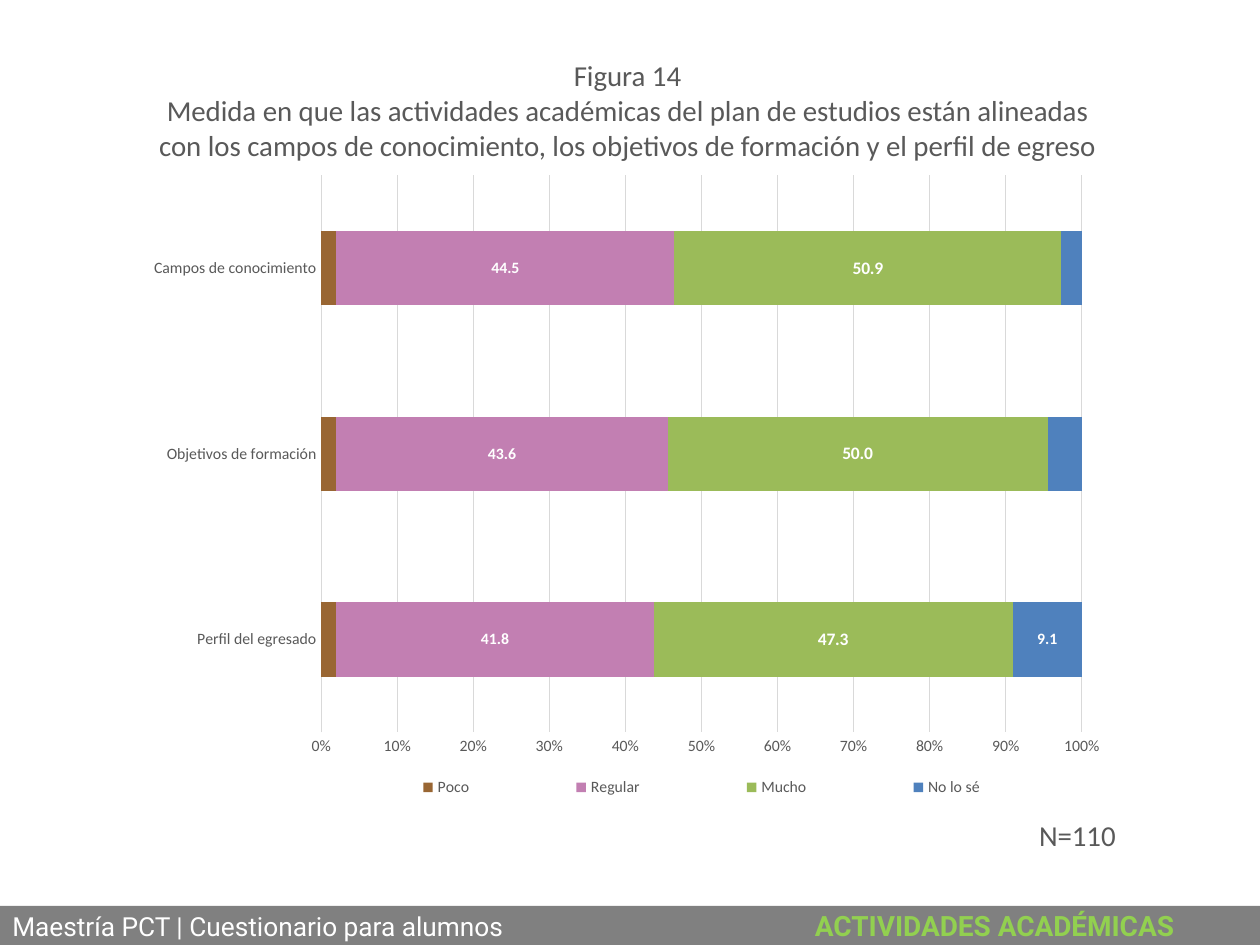
from lxml import etree
from pptx import Presentation
from pptx.chart.data import CategoryChartData
from pptx.dml.color import RGBColor
from pptx.enum.chart import XL_CHART_TYPE, XL_LEGEND_POSITION, XL_TICK_MARK
from pptx.enum.shapes import MSO_SHAPE
from pptx.enum.text import MSO_ANCHOR, MSO_AUTO_SIZE, PP_ALIGN
from pptx.oxml import parse_xml
from pptx.oxml.ns import nsdecls, qn
from pptx.util import Inches, Pt

THEME = {
    "font": "Calibri", "footer_font": "Roboto",
    "text": "595959", "grid": "D9D9D9", "white": "FFFFFF",
    "footer": "808080", "section": "92D050",
    "title_size": 16.5, "footer_size": 15, "section_size": 16,
    "chart_size": 9, "large_label_size": 10,
}


def style(font, size, color, name=THEME["font"], bold=False):
    font.size, font.name, font.bold = Pt(size), name, bold
    font.color.rgb = RGBColor.from_string(color)


def manual_layout(element, x, y, width, height, inner=False):
    """Place a chart part by shares of the chart's size."""
    for old in element.findall(qn("c:layout")):
        element.remove(old)
    target = '<c:layoutTarget val="inner"/>' if inner else ""
    layout = parse_xml(
        f'<c:layout {nsdecls("c")}><c:manualLayout>{target}'
        '<c:xMode val="edge"/><c:yMode val="edge"/>'
        f'<c:x val="{x}"/><c:y val="{y}"/><c:w val="{width}"/><c:h val="{height}"/>'
        '</c:manualLayout></c:layout>')
    position = element.find(qn("c:legendPos"))
    if position is None:
        element.insert(0, layout)
    else:
        position.addnext(layout)


presentation = Presentation()
presentation.slide_width, presentation.slide_height = Inches(10), Inches(7.5)
slide = presentation.slides.add_slide(presentation.slide_layouts[5])
shapes = slide.shapes

# One content column shared by title and chart
left, width = Inches(1.06), Inches(7.84)
footer_height = Inches(0.31)

# Title
title = shapes.title
title.left, title.top, title.width, title.height = left, Inches(0.41), width, Inches(0.93)
title.text_frame.text = (
    "Figura 14\nMedida en que las actividades académicas del plan de estudios están "
    "alineadas con los campos de conocimiento, los objetivos de formación y el perfil de egreso")
title.text_frame.auto_size = MSO_AUTO_SIZE.NONE
title.text_frame.vertical_anchor = MSO_ANCHOR.TOP
for paragraph in title.text_frame.paragraphs:
    paragraph.alignment = PP_ALIGN.CENTER
    style(paragraph.runs[0].font, THEME["title_size"], THEME["text"])

# Chart data: name, values, colour, label size
answers = [
    ("Poco", (2, 2, 2), "996633", None),
    ("Regular", (41.8, 43.6, 44.5), "C27FB2", THEME["chart_size"]),
    ("Mucho", (47.3, 50, 50.9), "9BBB59", THEME["large_label_size"]),
    ("No lo sé", (9.1, 4.5, 2.7), "4F81BD", None),
]
chart_data = CategoryChartData(number_format="0.0")
chart_data.categories = ["Perfil del egresado", "Objetivos de formación", "Campos de conocimiento"]
for name, values, _, _ in answers:
    chart_data.add_series(name, values)
chart = shapes.add_chart(XL_CHART_TYPE.BAR_STACKED_100, left, Inches(1.29),
                         width, Inches(5.14), chart_data).chart
chart.has_title = False
style(chart.font, THEME["chart_size"], THEME["text"])

# Bars and value labels
plot = chart.plots[0]
plot.gap_width, plot.overlap, plot.vary_by_categories = 150, 100, False
for series, (_, _, color, label_size) in zip(plot.series, answers):
    series.format.fill.solid()
    series.format.fill.fore_color.rgb = RGBColor.from_string(color)
    if label_size:
        labels = series.data_labels
        labels.show_value = True
        labels.number_format, labels.number_format_is_linked = "0.0", False
        style(labels.font, label_size, THEME["white"], bold=True)

# Only the widest "No lo sé" bar carries a label
unsure = plot.series[3]
unsure.data_labels.show_value = False
style(unsure.points[0].data_label.font, THEME["chart_size"], THEME["white"], bold=True)

# Axes
for axis in (chart.category_axis, chart.value_axis):
    axis.major_tick_mark = axis.minor_tick_mark = XL_TICK_MARK.NONE
    style(axis.tick_labels.font, THEME["chart_size"], THEME["text"])
value_axis = chart.value_axis
value_axis.minimum_scale, value_axis.maximum_scale, value_axis.major_unit = 0, 1, 0.1
value_axis.tick_labels.number_format = "0%"
value_axis.tick_labels.number_format_is_linked = False
value_axis.format.line.fill.background()
for line in (chart.category_axis.format.line, value_axis.major_gridlines.format.line):
    line.width = Pt(0.75)
    line.color.rgb = RGBColor.from_string(THEME["grid"])

# Legend, as wide as the plot
chart.has_legend = True
legend = chart.legend
legend.position, legend.include_in_layout = XL_LEGEND_POSITION.BOTTOM, False
style(legend.font, THEME["chart_size"], THEME["text"])
plot_area = chart._chartSpace.chart.plotArea
manual_layout(plot_area, 0.19, 0.02, 0.77, 0.86, inner=True)
manual_layout(legend._element, 0.19, 0.94, 0.77, 0.05)

# Sample size
sample = shapes.add_textbox(Inches(8.14), Inches(6.44), Inches(0.82), Inches(0.38))
sample.text_frame.word_wrap = False
sample.text_frame.text = "N=110"
paragraph = sample.text_frame.paragraphs[0]
paragraph.alignment = PP_ALIGN.CENTER
style(paragraph.runs[0].font, THEME["title_size"], THEME["text"])

# Footer band, with the section name at a tab stop
footer = shapes.add_shape(MSO_SHAPE.RECTANGLE, 0, presentation.slide_height - footer_height,
                          presentation.slide_width, footer_height)
footer.shadow.inherit = False
footer.fill.solid()
footer.fill.fore_color.rgb = RGBColor.from_string(THEME["footer"])
footer.line.fill.background()
footer.text_frame.vertical_anchor = MSO_ANCHOR.MIDDLE
paragraph = footer.text_frame.paragraphs[0]
paragraph.alignment = PP_ALIGN.LEFT
tab_list = etree.SubElement(paragraph._p.get_or_add_pPr(), qn("a:tabLst"))
etree.SubElement(tab_list, qn("a:tab"), pos=str(Inches(6.37)), algn="l")
for text, size, color, bold in [
    ("Maestría PCT | Cuestionario para alumnos", THEME["footer_size"], THEME["white"], False),
    ("\tACTIVIDADES ACADÉMICAS", THEME["section_size"], THEME["section"], True),
]:
    run = paragraph.add_run()
    run.text = text
    style(run.font, size, color, THEME["footer_font"], bold)

presentation.save("out.pptx")
